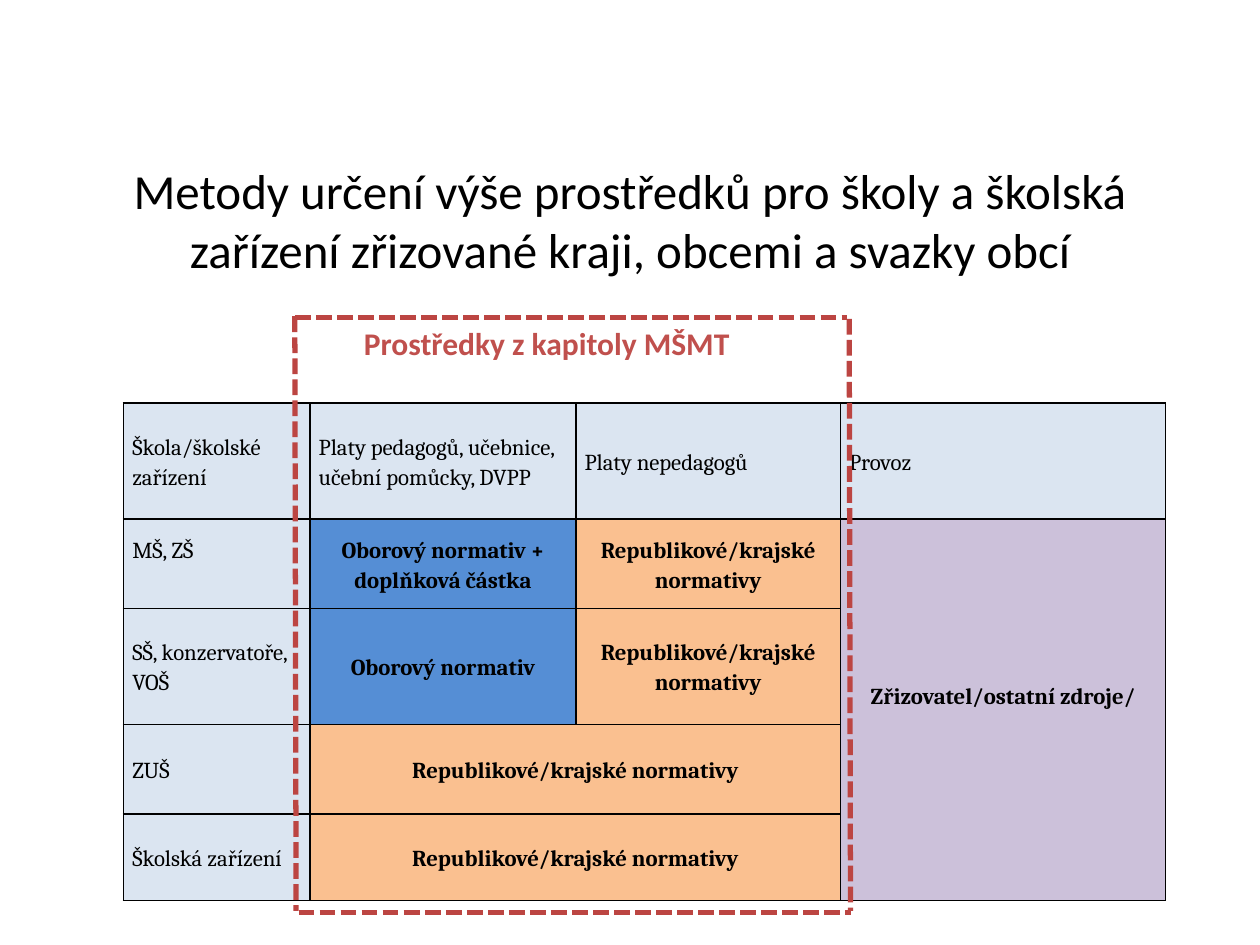
import dataclasses

import lxml.etree
import pptx
import pptx.dml.color
import pptx.enum.dml
import pptx.enum.shapes
import pptx.enum.text
import pptx.oxml.ns
import pptx.util

Inches = pptx.util.Inches
Align = pptx.enum.text.PP_ALIGN
Anchor = pptx.enum.text.MSO_ANCHOR


@dataclasses.dataclass(frozen=True)
class Theme:
    """Colours, fonts and type sizes of the slide."""
    ink: str = "000000"
    frame: str = "BC4542"
    caption: str = "C0504D"
    label: str = "DBE5F1"
    field: str = "558ED5"
    regional: str = "FAC090"
    founder: str = "CCC1DA"
    sans: str = "Calibri"
    serif: str = "Cambria"
    title_size: int = 28
    caption_size: int = 18
    table_size: int = 13
    border_width: int = 1
    frame_width: int = 3


THEME = Theme()
COLUMN_WIDTHS = (1.48, 2.11, 2.1, 2.58)
ROW_HEIGHTS = (0.92, 0.71, 0.92, 0.71, 0.69)
LINE_HEIGHT = 0.24
REGIONAL = "Republikové/krajské normativy"
HEADERS = ("Škola/školské zařízení", "Platy pedagogů, učebnice, učební pomůcky, DVPP",
           "Platy nepedagogů", "Provoz")
SCHOOLS = ("MŠ, ZŠ", "SŠ, konzervatoře, VOŠ", "ZUŠ", "Školská zařízení")
METHODS = (
    (1, 1, "Oborový normativ + doplňková částka", THEME.field),
    (1, 2, REGIONAL, THEME.regional),
    (1, 3, "Zřizovatel/ostatní zdroje/", THEME.founder),
    (2, 1, "Oborový normativ", THEME.field),
    (2, 2, REGIONAL, THEME.regional),
    (3, 1, REGIONAL, THEME.regional),
    (4, 1, REGIONAL, THEME.regional),
)
MERGES = (((1, 3), (4, 3)), ((3, 1), (3, 2)), ((4, 1), (4, 2)))
FRAME_LINES = (
    (2.34, 2.51, 2.35, 7.23),
    (2.34, 2.52, 6.72, 2.52),
    (6.74, 2.53, 6.75, 7.23),
    (2.37, 7.24, 6.75, 7.24),
)


def rgb(value):
    """Return a colour object for a hex value."""
    return pptx.dml.color.RGBColor.from_string(value)


def write(frame, text, font, size, color, bold=False, align=Align.CENTER):
    """Put one formatted paragraph into a text frame and return it."""
    frame.text = text
    frame.word_wrap = True
    paragraph = frame.paragraphs[0]
    paragraph.alignment = align
    for span in paragraph.runs:
        span.font.name = font
        span.font.size = pptx.util.Pt(size)
        span.font.bold = bold
        span.font.color.rgb = rgb(color)
    return paragraph


def add_text(page, bounds, text, size, color, bold=False, anchor=Anchor.TOP):
    """Add a centred text box."""
    box = page.shapes.add_textbox(*map(Inches, bounds))
    write(box.text_frame, text, THEME.sans, size, color, bold)
    box.text_frame.vertical_anchor = anchor


def add_borders(cell):
    """Draw a solid line on every side of a cell."""
    properties = cell._tc.get_or_add_tcPr()
    tag = pptx.oxml.ns.qn
    for index, side in enumerate(("a:lnL", "a:lnR", "a:lnT", "a:lnB")):
        line = lxml.etree.Element(tag(side), w=str(pptx.util.Pt(THEME.border_width)))
        fill = lxml.etree.SubElement(line, tag("a:solidFill"))
        lxml.etree.SubElement(fill, tag("a:srgbClr"), val=THEME.ink)
        properties.insert(index, line)


def fill_cell(cell, text, color, bold=False, align=Align.LEFT):
    """Write and colour one table cell."""
    paragraph = write(cell.text_frame, text, THEME.serif, THEME.table_size,
                      THEME.ink, bold, align)
    paragraph.line_spacing = 1.15
    cell.vertical_anchor = Anchor.MIDDLE
    cell.margin_left = cell.margin_right = Inches(0.07)
    cell.margin_top = cell.margin_bottom = 0
    cell.fill.solid()
    cell.fill.fore_color.rgb = rgb(color)


def add_methods_table(page):
    """Add the table of funding methods by school type."""
    table = page.shapes.add_table(
        len(ROW_HEIGHTS), len(COLUMN_WIDTHS), Inches(0.98), Inches(3.2),
        Inches(sum(COLUMN_WIDTHS)), Inches(sum(ROW_HEIGHTS))).table
    table.first_row = table.horz_banding = False
    for column, width in zip(table.columns, COLUMN_WIDTHS):
        column.width = Inches(width)
    for row, height in zip(table.rows, ROW_HEIGHTS):
        row.height = Inches(height)
    for first, last in MERGES:
        table.cell(*first).merge(table.cell(*last))
    for index, text in enumerate(HEADERS):
        fill_cell(table.cell(0, index), text, THEME.label)
    for index, text in enumerate(SCHOOLS, 1):
        fill_cell(table.cell(index, 0), text, THEME.label)
    for row, column, text, color in METHODS:
        fill_cell(table.cell(row, column), text, color, True, Align.CENTER)
    for position in ((1, 0), (1, 3)):
        table.cell(*position).margin_bottom = Inches(LINE_HEIGHT)
    for cell in table.iter_cells():
        add_borders(cell)


def add_dashed_line(page, ends):
    """Add one dashed line of the frame."""
    line = page.shapes.add_connector(
        pptx.enum.shapes.MSO_CONNECTOR.STRAIGHT, *map(Inches, ends))
    line.line.color.rgb = rgb(THEME.frame)
    line.line.width = pptx.util.Pt(THEME.frame_width)
    line.line.dash_style = pptx.enum.dml.MSO_LINE.SQUARE_DOT
    properties = line._element.spPr
    lxml.etree.SubElement(properties, pptx.oxml.ns.qn("a:effectLst"))


def main():
    """Build and save the slide."""
    deck = pptx.Presentation()
    deck.slide_width, deck.slide_height = Inches(10), Inches(7.5)
    page = deck.slides.add_slide(deck.slide_layouts[6])
    add_text(page, (0.5, 1.31, 9, 0.87),
             "Metody určení výše prostředků pro školy a školská zařízení "
             "zřizované kraji, obcemi a svazky obcí",
             THEME.title_size, THEME.ink, anchor=Anchor.MIDDLE)
    add_methods_table(page)
    for ends in FRAME_LINES:
        add_dashed_line(page, ends)
    add_text(page, (2.37, 2.52, 3.94, 0.66), "Prostředky z kapitoly MŠMT",
             THEME.caption_size, THEME.caption, bold=True)
    deck.save("out.pptx")


if __name__ == "__main__":
    main()
